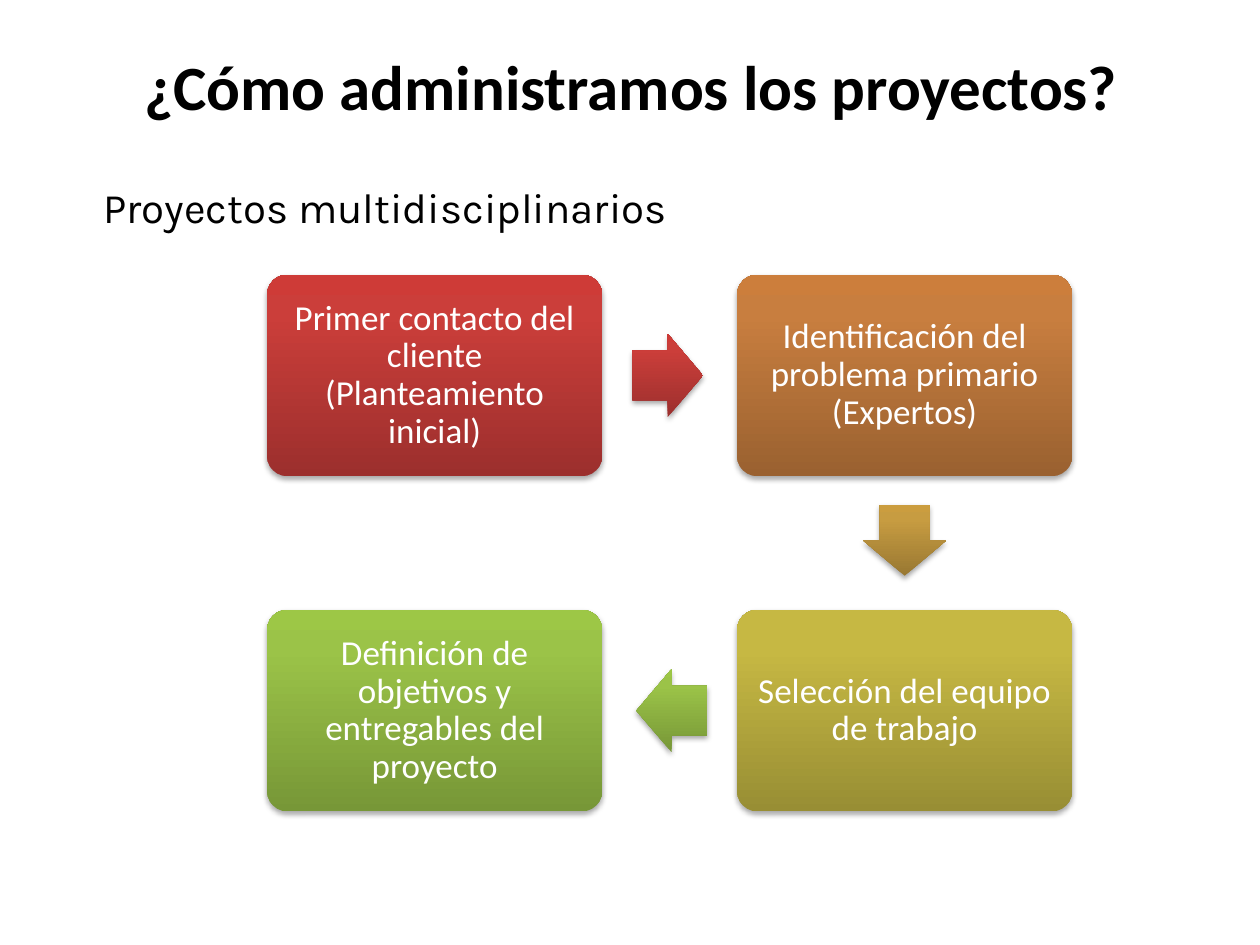
import copy
from dataclasses import dataclass

import lxml.etree
import pptx
import pptx.dml.color
import pptx.enum.shapes
import pptx.enum.text
import pptx.oxml
import pptx.oxml.ns
import pptx.util

Inches = pptx.util.Inches
Pt = pptx.util.Pt
qn = pptx.oxml.ns.qn
PRESET = pptx.enum.shapes.MSO_SHAPE
ALIGN = pptx.enum.text.PP_ALIGN
ANCHOR = pptx.enum.text.MSO_ANCHOR

COLORS = {
    "black": "000000",
    "white": "FFFFFF",
    "red": ("9C2F2D", "CB3E3A", "CE3B37"),
    "orange": ("9A6130", "C87E3F", "CC7E3C"),
    "ochre": ("997832", "C79C41", "CB9D3F"),
    "olive": ("988E34", "C6B843", "C9BB41"),
    "green": ("779737", "9BC348", "9DC746"),
}
STOP_POSITIONS = (0, 0.8, 1)

COLUMN_LEFTS = (2.12, 5.85)
ROW_TOPS = (2.18, 4.84)
STEP_SIZE = (2.66, 1.6)
ARROW_SIZE = (0.56, 0.66)


@dataclass
class Step:
    text: str
    column: int
    row: int
    color: str


@dataclass
class Arrow:
    left: float
    top: float
    rotation: int
    color: str


STEPS = (
    Step("Primer contacto del cliente (Planteamiento inicial)", 0, 0, "red"),
    Step("Identificación del problema primario (Expertos)", 1, 0, "orange"),
    Step("Selección del equipo de trabajo", 1, 1, "olive"),
    Step("Definición de objetivos y entregables del proyecto", 0, 1, "green"),
)
ARROWS = (
    Arrow(5.02, 2.65, 0, "red"),
    Arrow(6.9, 3.96, 90, "ochre"),
    Arrow(5.05, 5.31, 180, "green"),
)


def rgb(hex_color: str) -> pptx.dml.color.RGBColor:
    return pptx.dml.color.RGBColor.from_string(hex_color)


def apply(target: object, values: dict) -> None:
    for name, value in values.items():
        setattr(target, name, value)


def style_surface(shape, color: str) -> None:
    shape.line.fill.background()
    shape.fill.gradient()
    shape.fill.gradient_angle = 90
    properties = shape._element.spPr
    gradient = properties.find(qn("a:gradFill"))
    gradient.set("rotWithShape", "0")
    stop_list = gradient.find(qn("a:gsLst"))
    stop_list.append(copy.deepcopy(stop_list[0]))
    for stop, position, shade in zip(
        shape.fill.gradient_stops, STOP_POSITIONS, COLORS[color]
    ):
        stop.position = position
        stop.color.rgb = rgb(shade)
    shape.shadow.inherit = False
    shadow = lxml.etree.SubElement(
        properties.find(qn("a:effectLst")), qn("a:outerShdw"),
        blurRad=str(Pt(3.1)), dist=str(Pt(1.8)), dir="5400000", rotWithShape="0",
    )
    shade = lxml.etree.SubElement(shadow, qn("a:srgbClr"), val=COLORS["black"])
    lxml.etree.SubElement(shade, qn("a:alpha"), val="35000")


def draw_step(slide, step: Step) -> None:
    box = slide.shapes.add_shape(
        PRESET.ROUNDED_RECTANGLE,
        Inches(COLUMN_LEFTS[step.column]), Inches(ROW_TOPS[step.row]),
        *map(Inches, STEP_SIZE),
    )
    box.adjustments[0] = 0.1
    style_surface(box, step.color)
    frame = box.text_frame
    apply(frame, {
        "text": step.text, "word_wrap": True, "vertical_anchor": ANCHOR.MIDDLE,
        **{f"margin_{side}": Inches(0.08)
           for side in ("left", "top", "right", "bottom")},
    })
    paragraph = frame.paragraphs[0]
    apply(paragraph, {"alignment": ALIGN.CENTER, "line_spacing": 0.9})
    apply(paragraph.runs[0].font, {"name": "Calibri", "size": Pt(20)})
    paragraph.runs[0].font.color.rgb = rgb(COLORS["white"])


def draw_arrow(slide, arrow: Arrow) -> None:
    pointer = slide.shapes.add_shape(
        PRESET.RIGHT_ARROW, Inches(arrow.left), Inches(arrow.top),
        *map(Inches, ARROW_SIZE),
    )
    pointer.adjustments[0] = 0.6
    pointer.adjustments[1] = 0.5
    pointer.rotation = arrow.rotation
    style_surface(pointer, arrow.color)


def fill_placeholder(placeholder, text: str, box: dict, frame_format: dict,
                     paragraph_format: dict, font_format: dict):
    apply(placeholder, {name: Inches(value) for name, value in box.items()})
    frame = placeholder.text_frame
    apply(frame, {"text": text, "word_wrap": True,
                  "auto_size": pptx.enum.text.MSO_AUTO_SIZE.NONE, **frame_format})
    paragraph = frame.paragraphs[0]
    apply(paragraph, paragraph_format)
    apply(paragraph.runs[0].font, font_format)
    paragraph.runs[0].font.color.rgb = rgb(COLORS["black"])
    return paragraph


def main() -> None:
    presentation = pptx.Presentation()
    apply(presentation, {"slide_width": Inches(10), "slide_height": Inches(7.5)})
    slide = presentation.slides.add_slide(presentation.slide_layouts[1])

    fill_placeholder(
        slide.shapes.title, "¿Cómo administramos los proyectos?",
        {"left": 0.01, "top": -0.03, "width": 10, "height": 1.42},
        {"vertical_anchor": ANCHOR.MIDDLE},
        {"alignment": ALIGN.CENTER},
        {"name": "Calibri", "size": Pt(36), "bold": True},
    )
    subtitle = fill_placeholder(
        slide.placeholders[1], "Proyectos multidisciplinarios",
        {"left": 0.72, "top": 1.39, "width": 9, "height": 0.59},
        {"vertical_anchor": ANCHOR.TOP},
        {"space_before": Pt(0)},
        {"name": "Karla", "size": Pt(24)},
    )
    indents = subtitle._p.get_or_add_pPr()
    indents.set("marL", str(Inches(0.38)))
    indents.set("indent", str(Inches(-0.38)))
    lxml.etree.SubElement(indents, qn("a:buNone"))

    for step in STEPS:
        draw_step(slide, step)
    for arrow in ARROWS:
        draw_arrow(slide, arrow)

    presentation.save("out.pptx")


if __name__ == "__main__":
    main()
